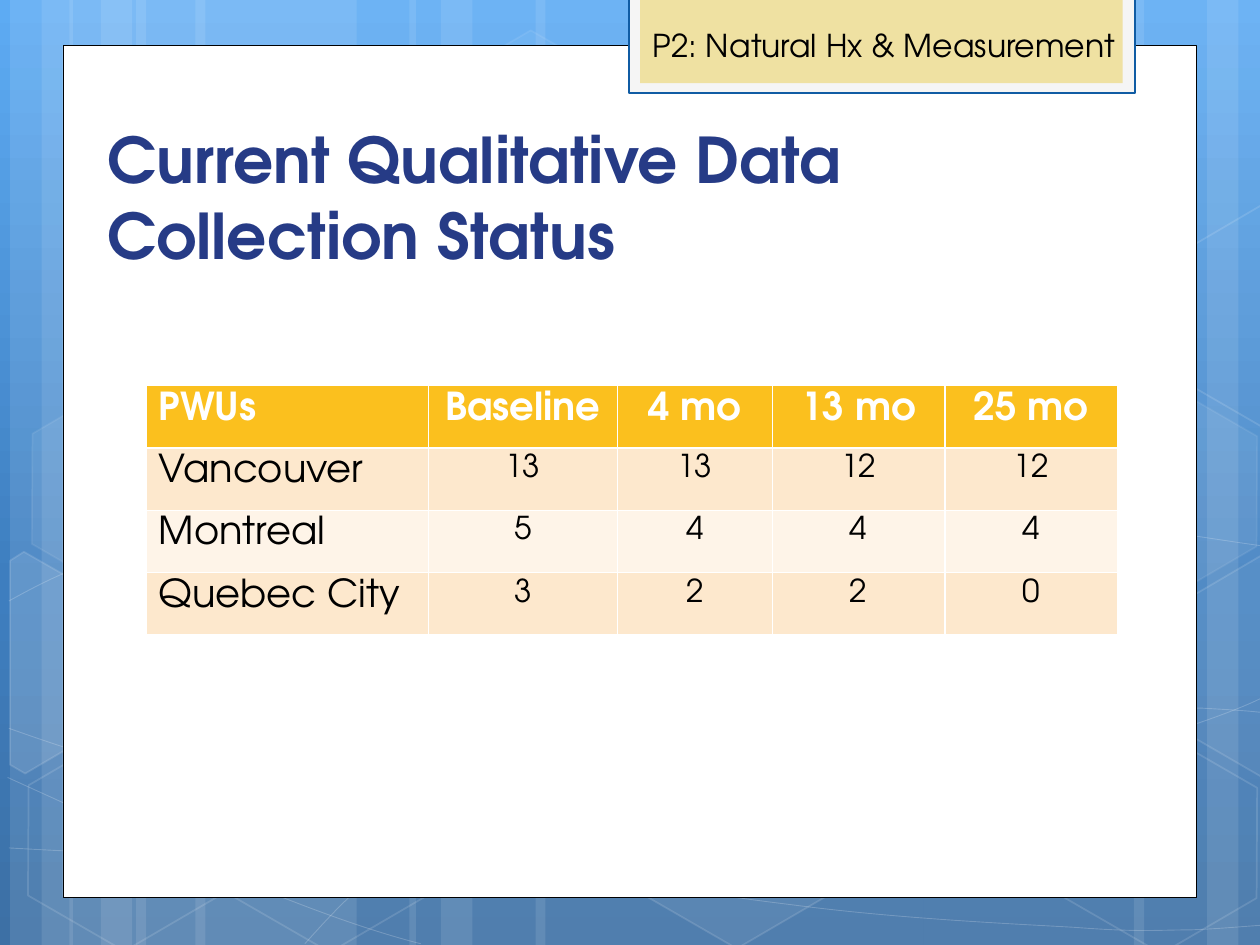
"""Build a slide on the status of qualitative data collection."""
import copy
import pptx
import pptx.util
import pptx.dml.color
import pptx.enum.shapes
import pptx.enum.text
import pptx.oxml
import pptx.oxml.ns

Inches, Pt = pptx.util.Inches, pptx.util.Pt
RGB = pptx.dml.color.RGBColor.from_string
KIND = pptx.enum.shapes.MSO_SHAPE
ALIGN = pptx.enum.text.PP_ALIGN
qn = pptx.oxml.ns.qn

THEME = {
    "font": "TeX Gyre Adventor",
    "sky": [(0, "5DABF3"), (0.62, "3E7EBF"), (1, "3D70A5")],
    "white": "FFFFFF", "ink": "000000", "navy": "263B86",
    "tab": "F5F5F5", "rim": "105CA4", "sand": "EFE1A2",
    "head": "FBC01E", "bands": ["FDE8CD", "FEF4E8"],
    "title": 36, "label": 22, "value": 18,
}

TITLE = "Current Qualitative Data \vCollection Status"
TAG = "P2: Natural Hx & Measurement"
ROWS = [
    ["PWUs", "Baseline", "4 mo", "13 mo", "25 mo"],
    ["Vancouver", "13", "13", "12", "12"],
    ["Montreal", "5", "4", "4", "4"],
    ["Quebec City", "3", "2", "2", "0"],
]
COLS = [2.24, 1.5, 1.23, 1.37, 1.37]
TALL = 1.98

BARS = [(1.08, 1.75), (0.08, 0.5), (0.33, 0.83), (1.55, 1.75), (0.55, 0.5), (0.8, 0.83),
        (7.33, 1.75), (9.58, 0.5), (9, 0.83), (4.25, 3.08), (3.25, 0.5), (3.5, 0.83)]
CURVES = [
    [(0.07, 6.73), (0.61, 6.76), (1.15, 6.79), (1.9, 6.78), (2.65, 6.77), (3.58, 6.75),
     (4.58, 6.65), (5.58, 6.55), (7, 6.36), (7.92, 6.17), (8.83, 5.98), (9.77, 5.68),
     (10.07, 5.51)],
    [(0.07, 4.77), (0.36, 4.61), (0.65, 4.46), (1.21, 4.31), (1.78, 4.16), (2.59, 3.94),
     (3.47, 3.87), (4.36, 3.8), (5.44, 3.79), (6.54, 3.87), (7.64, 3.95), (9.47, 4.26),
     (10.07, 4.34)],
    [(0.06, 6.17), (1.27, 6.72), (2.47, 7.27), (3.34, 7.49)],
    [(0.07, 5.78), (0.38, 5.89), (0.7, 6), (1.28, 6.16), (1.86, 6.31), (2.73, 6.56),
     (3.57, 6.73), (4.4, 6.9), (5.45, 7.08), (6.28, 7.18), (7.11, 7.29), (8, 7.33),
     (8.53, 7.36), (9.05, 7.4), (9.19, 7.38), (9.45, 7.38), (9.71, 7.37), (9.89, 7.35),
     (10.07, 7.34)],
    [(2.42, 7.49), (2.6, 7.29), (2.78, 7.09), (3.02, 6.91), (3.26, 6.73), (3.6, 6.53),
     (3.88, 6.39), (4.16, 6.25), (4.33, 6.19), (4.7, 6.09), (5.06, 5.99), (5.73, 5.85),
     (6.08, 5.78), (6.44, 5.71), (6.49, 5.71), (6.8, 5.69), (7.11, 5.66), (7.6, 5.63),
     (7.94, 5.62), (8.29, 5.61), (8.86, 5.62), (8.86, 5.62), (9.08, 5.62), (9.31, 5.62),
     (9.53, 5.62), (9.71, 5.63), (9.88, 5.64), (9.97, 5.65), (10.06, 5.66), (10.03, 5.65),
     (10.06, 5.66)],
]
HEXES = [(3.34, 0.36, 4, 8), (4.97, 5.89, 6, 12), (0.11, 5.91, 0, 12), (0.14, 3.12, 7, 8),
         (1.74, 5.92, 0, 12), (7.53, 4.53, 10, 12), (8.34, 5.93, 0, 12), (8.34, 3.14, 7, 8)]
CUTS = [
    ([(0.08, 4.45), (0.19, 4.38), (0.96, 4.82), (0.95, 5.7), (0.2, 6.14), (0.08, 6.07)], 10),
    ([(9.26, 4.85), (10.01, 4.41), (10.09, 4.46), (10.09, 6.13), (10.02, 6.17),
      (9.26, 5.73)], 4),
    ([(9.26, 2.07), (10.01, 1.63), (10.1, 1.68), (10.09, 3.35), (10.02, 3.39),
      (9.26, 2.95)], 0),
]


def put(thing, **vals):
    for key, val in vals.items():
        setattr(thing, key, val)


def paint(shape, fill=None, line=None, width=1, fade=()):
    shape.shadow.inherit = False
    for part, hue in ((shape.fill, fill), (shape.line.fill, line)):
        if hue:
            part.solid()
            part.fore_color.rgb = RGB(hue)
        else:
            part.background()
    if line:
        shape.line.width = Pt(width)
    for hue, pct in zip(shape.element.iter(qn("a:srgbClr")), fade):
        hue.append(pptx.oxml.parse_xml(
            f'<a:alpha {pptx.oxml.ns.nsdecls("a")} val="{pct * 1000}"/>'))


def glass(tint, edge):
    white = THEME["white"]
    if tint:
        return {"fill": white, "line": white, "fade": [tint, edge]}
    return {"line": white, "fade": [edge]}


def block(slide, kind, box, **look):
    shape = slide.shapes.add_shape(kind, *map(Inches, box))
    paint(shape, **look)
    return shape


def trace(slide, dots, close, **look):
    dots = [(Inches(x), Inches(y)) for x, y in dots]
    pen = slide.shapes.build_freeform(*dots[0])
    pen.add_line_segments(dots[1:], close=close)
    shape = pen.convert_to_shape()
    paint(shape, **look)
    return shape


def bend(shape):
    legs = list(shape.element.iter(qn("a:lnTo")))
    for i in range(0, len(legs), 3):
        curve = pptx.oxml.parse_xml(f'<a:cubicBezTo {pptx.oxml.ns.nsdecls("a")}/>')
        legs[i].addprevious(curve)
        for leg in legs[i:i + 3]:
            curve.append(leg[0])
            leg.getparent().remove(leg)


def write(frame, text, size, hue, bold=False, align=ALIGN.LEFT):
    frame.text = text
    for para in frame.paragraphs:
        para.alignment = align
        for run in para.runs:
            put(run.font, name=THEME["font"], size=Pt(size), bold=bold)
            run.font.color.rgb = RGB(hue)


def sky(slide):
    fill = slide.background.fill
    fill.gradient()
    fill.gradient_angle = 270
    stops = next(slide.element.iter(qn("a:gsLst")))
    stops.append(copy.deepcopy(stops[0]))
    for stop, (place, hue) in zip(fill.gradient_stops, THEME["sky"]):
        stop.position = place
        stop.color.rgb = RGB(hue)


def scene(slide):
    white = THEME["white"]
    for left, width in BARS:
        block(slide, KIND.RECTANGLE, (left, 0, width, 7.5), fill=white, fade=[10])
    for knots in CURVES:
        bend(trace(slide, knots, False, line=white, width=0.5, fade=[20]))
    for left, top, tint, edge in HEXES:
        hexa = block(slide, KIND.HEXAGON, (left, top, 1.75, 1.52), **glass(tint, edge))
        hexa.rotation = 30
        hexa.adjustments[0] = 0.285
    for dots, tint in CUTS:
        trace(slide, dots, True, **glass(tint, 12))
    block(slide, KIND.RECTANGLE, (0.5, 0.36, 9, 6.76), fill=white, line=THEME["ink"], width=0.5)
    block(slide, KIND.RECTANGLE, (4.99, -0.02, 4.02, 0.76),
          fill=THEME["tab"], line=THEME["rim"], width=1.25)
    block(slide, KIND.RECTANGLE, (5.08, -0.02, 3.83, 0.68), fill=THEME["sand"])


def grid(slide):
    box = (1.16, 3.06, sum(COLS), TALL)
    table = slide.shapes.add_table(len(ROWS), len(COLS), *map(Inches, box)).table
    for col, width in zip(table.columns, COLS):
        col.width = Inches(width)
    for r, row in enumerate(ROWS):
        for c, text in enumerate(row):
            cell, head = table.cell(r, c), r == 0
            cell.fill.solid()
            cell.fill.fore_color.rgb = RGB(THEME["head"] if head else THEME["bands"][(r - 1) % 2])
            write(cell.text_frame, text, THEME["label" if head or c == 0 else "value"],
                  THEME["white" if head else "ink"], head, ALIGN.CENTER if c else ALIGN.LEFT)


def main():
    deck = pptx.Presentation()
    put(deck, slide_width=Inches(10), slide_height=Inches(7.5))
    slide = deck.slides.add_slide(deck.slide_layouts[5])
    sky(slide)
    scene(slide)
    title = slide.shapes.title
    slide.shapes.element.append(title.element)
    put(title, left=Inches(0.75), top=Inches(0.96), width=Inches(8.75), height=Inches(1.25))
    put(title.text_frame, vertical_anchor=pptx.enum.text.MSO_ANCHOR.BOTTOM,
        auto_size=pptx.enum.text.MSO_AUTO_SIZE.NONE, word_wrap=True)
    write(title.text_frame, TITLE, THEME["title"], THEME["navy"], True)
    grid(slide)
    tag = slide.shapes.add_textbox(*map(Inches, (5.08, 0.16, 3.92, 0.4))).text_frame
    put(tag, word_wrap=False, auto_size=pptx.enum.text.MSO_AUTO_SIZE.SHAPE_TO_FIT_TEXT)
    write(tag, TAG, THEME["value"], THEME["ink"])
    deck.save("out.pptx")


if __name__ == "__main__":
    main()
